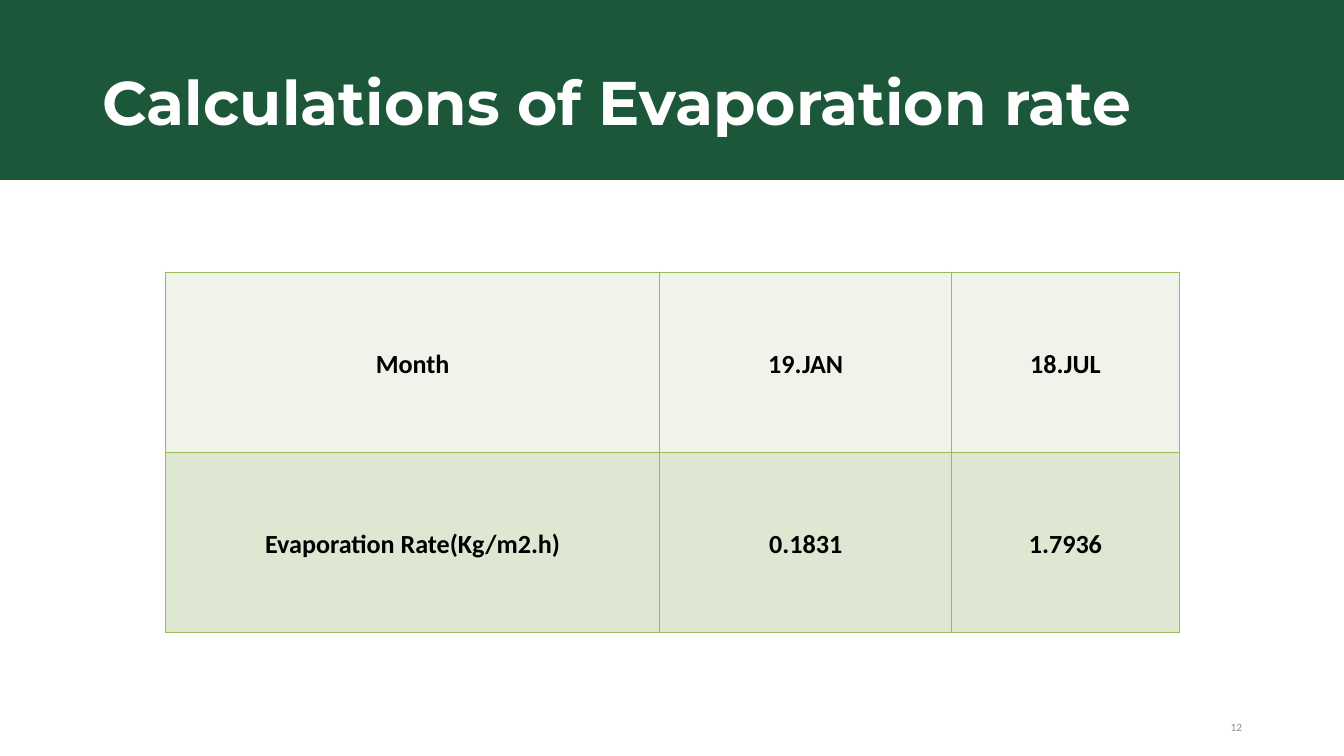
from lxml import etree
from pptx import Presentation
from pptx.dml.color import RGBColor
from pptx.enum import text
from pptx.oxml import ns
from pptx.util import Inches, Pt

TITLE = "Calculations of Evaporation rate"
PAGE_NUMBER = "12"
ROWS = [
    ("Month", "19.JAN", "18.JUL"),
    ("Evaporation Rate(Kg/m2.h)", "0.1831", "1.7936"),
]
COLUMN_WIDTHS = (7.36, 4.34, 3.39)
ROW_HEIGHT = 2.68
THEME = {
    "heading_font": "Montserrat", "body_font": "Calibri",
    "title_size": 66, "title_spacing": 108.9, "cell_size": 28, "number_size": 12,
    "band": "1C5739", "title": "FFFFFF", "cell_text": "000000", "number": "8C8C8C",
    "border": "9BBB59", "row_fills": ("EFF3EA", "DEE7D1"),
}


def color(name):
    return RGBColor.from_string(name)


def write(frame, words, font, size, ink, bold, align, spacing=None):
    paragraph = frame.paragraphs[0]
    paragraph.alignment = align
    paragraph.line_spacing = spacing
    run = paragraph.add_run()
    run.text = words
    run.font.name = font
    run.font.size = Pt(size)
    run.font.bold = bold
    run.font.color.rgb = color(ink)


def set_borders(cell):
    properties = cell._tc.get_or_add_tcPr()
    for index, side in enumerate(("lnL", "lnR", "lnT", "lnB")):
        line = etree.Element(ns.qn(f"a:{side}"), w=str(Pt(1)))
        fill = etree.SubElement(line, ns.qn("a:solidFill"))
        etree.SubElement(fill, ns.qn("a:srgbClr"), val=THEME["border"])
        properties.insert(index, line)


def add_band(slide):
    left, right, bottom = Inches(-0.58), Inches(20.25), Inches(2.68)
    builder = slide.shapes.build_freeform(left, 0)
    builder.add_line_segments([(right, 0), (right, bottom), (left, bottom)], close=True)
    band = builder.convert_to_shape()
    band.shadow.inherit = False
    band.fill.solid()
    band.fill.fore_color.rgb = color(THEME["band"])
    band.line.fill.background()


def add_title(slide):
    title = slide.shapes.title
    title.left, title.top = Inches(0.75), Inches(0.54)
    title.width, title.height = Inches(16.85), Inches(1.39)
    frame = title.text_frame
    frame.margin_left = frame.margin_right = frame.margin_top = frame.margin_bottom = 0
    frame.vertical_anchor = text.MSO_ANCHOR.TOP
    frame.auto_size = text.MSO_AUTO_SIZE.SHAPE_TO_FIT_TEXT
    write(frame, TITLE, THEME["heading_font"], THEME["title_size"], THEME["title"],
          True, text.PP_ALIGN.CENTER, Pt(THEME["title_spacing"]))
    slide.shapes._spTree.append(title._element)


def add_rate_table(slide):
    table = slide.shapes.add_table(
        len(ROWS), len(COLUMN_WIDTHS), Inches(2.46), Inches(4.05),
        Inches(sum(COLUMN_WIDTHS)), Inches(ROW_HEIGHT * len(ROWS))).table
    for column, width in zip(table.columns, COLUMN_WIDTHS):
        column.width = Inches(width)
    for row, values, fill in zip(table.rows, ROWS, THEME["row_fills"]):
        row.height = Inches(ROW_HEIGHT)
        for cell, value in zip(row.cells, values):
            cell.fill.solid()
            cell.fill.fore_color.rgb = color(fill)
            cell.margin_left = cell.margin_right = Inches(0.07)
            cell.margin_top = cell.margin_bottom = 0
            cell.vertical_anchor = text.MSO_ANCHOR.MIDDLE
            write(cell.text_frame, value, THEME["body_font"], THEME["cell_size"],
                  THEME["cell_text"], True, text.PP_ALIGN.CENTER, 1.15)
            set_borders(cell)


def add_page_number(slide):
    frame = slide.shapes.add_textbox(
        Inches(16.25), Inches(10.62), Inches(2.33), Inches(0.4)).text_frame
    frame.word_wrap = True
    frame.vertical_anchor = text.MSO_ANCHOR.MIDDLE
    write(frame, PAGE_NUMBER, THEME["body_font"], THEME["number_size"],
          THEME["number"], False, text.PP_ALIGN.RIGHT)


def main():
    presentation = Presentation()
    presentation.slide_width, presentation.slide_height = Inches(20), Inches(11.25)
    slide = presentation.slides.add_slide(presentation.slide_layouts[5])
    add_page_number(slide)
    add_rate_table(slide)
    add_band(slide)
    add_title(slide)
    presentation.save("out.pptx")


if __name__ == "__main__":
    main()
